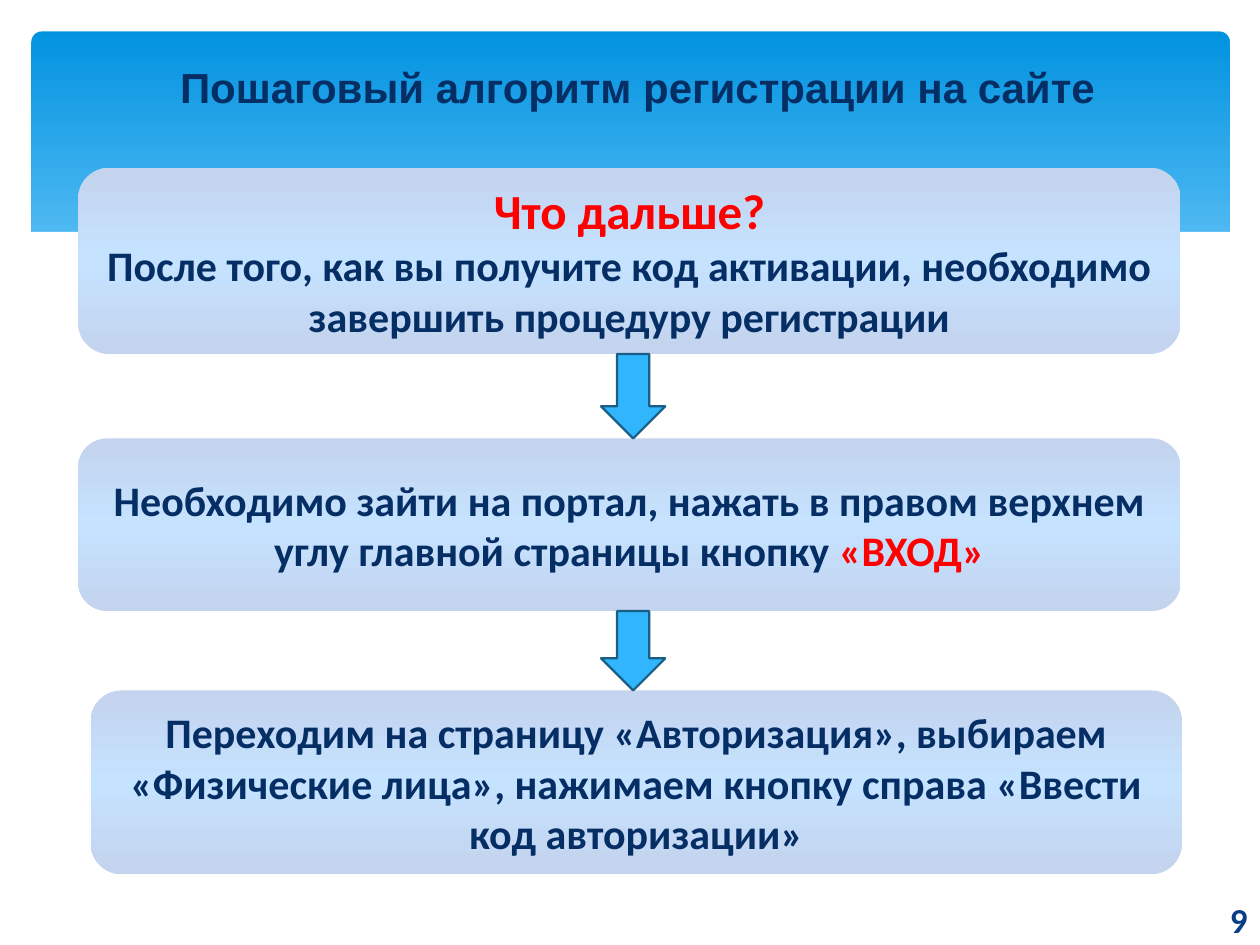
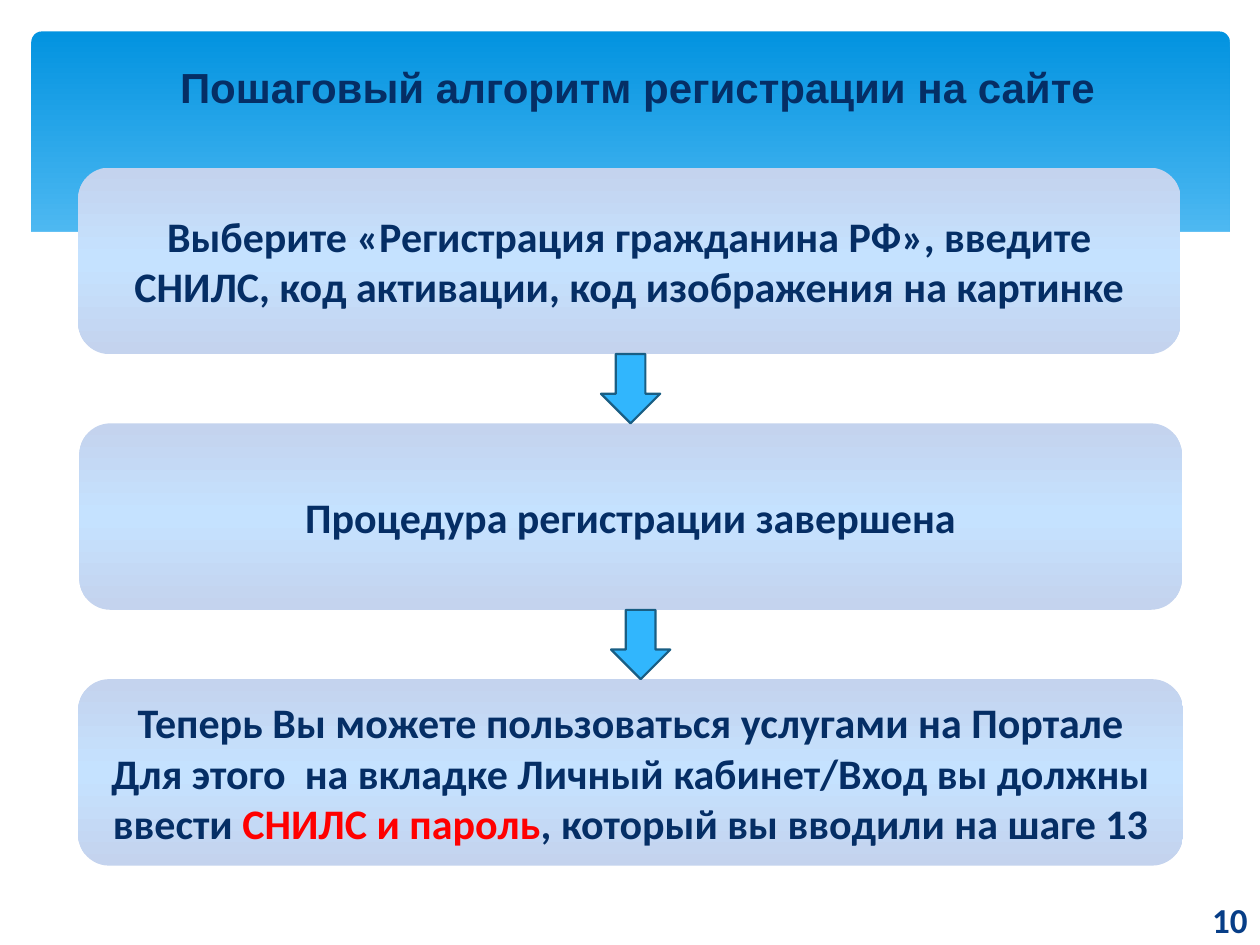
"""Build two slides on the steps of registering on a portal."""
from itertools import pairwise

from lxml.etree import SubElement
from pptx import Presentation
from pptx.dml.color import RGBColor
from pptx.enum.shapes import MSO_SHAPE
from pptx.enum.text import MSO_ANCHOR, PP_ALIGN
from pptx.oxml.ns import qn
from pptx.util import Inches, Pt

COLORS = {
    "navy": "052E65", "red": "FF0000", "number": "073E87", "white": "FFFFFF",
    "band_top": "0293E0", "band_bottom": "83D3FE",
    "step_edge": "C4D3EE", "step_middle": "C5E2FF",
    "arrow": "31B6FD", "arrow_line": "195E84",
}
TITLE = "Пошаговый алгоритм регистрации на сайте"
BAND_GRADIENT = [(0, "band_top"), (100, "band_bottom")]
STEP_GRADIENT = [(0, "step_edge"), (50, "step_middle"), (100, "step_edge")]

SLIDES = [
    {
        "number": "9",
        "arrow_width": 0.51,
        "arrow_lefts": [4.77, 4.77],
        "steps": [
            ((0.62, 1.33, 8.75, 1.48), [
                [("Что дальше?", "red", 28)],
                [("После того, как вы получите код активации, необходимо "
                  "завершить процедуру регистрации", "navy", 24)],
            ]),
            ((0.62, 3.48, 8.75, 1.37), [
                [("Необходимо зайти на портал, нажать в правом верхнем углу "
                  "главной страницы кнопку ", "navy", 24),
                 ("«ВХОД»", "red", 24)],
            ]),
            ((0.72, 5.48, 8.66, 1.46), [
                [("Переходим на страницу «Авторизация», выбираем «Физические лица», "
                  "нажимаем кнопку справа «Ввести код авторизации»", "navy", 24)],
            ]),
        ],
    },
    {
        "number": "10",
        "arrow_width": 0.47,
        "arrow_lefts": [4.77, 4.85],
        "steps": [
            ((0.62, 1.33, 8.75, 1.48), [
                [("Выберите «Регистрация гражданина РФ», введите СНИЛС, "
                  "код активации, код изображения на картинке", "navy", 24)],
            ]),
            ((0.63, 3.36, 8.75, 1.48), [
                [("Процедура регистрации завершена", "navy", 24)],
            ]),
            ((0.62, 5.39, 8.77, 1.48), [
                [("Теперь Вы можете пользоваться услугами на Портале", "navy", 24)],
                [("Для этого  на вкладке Личный кабинет/Вход вы должны ввести ", "navy", 24),
                 ("СНИЛС и пароль", "red", 24),
                 (", который вы вводили на шаге 13", "navy", 24)],
            ]),
        ],
    },
]


def rgb(color):
    return RGBColor.from_string(COLORS[color])


def add_plain_shape(slide, kind, box):
    shape = slide.shapes.add_shape(kind, *map(Inches, box))
    shape.shadow.inherit = False
    shape.line.fill.background()
    return shape


def fill_solid(shape, color):
    shape.fill.solid()
    shape.fill.fore_color.rgb = rgb(color)


def fill_gradient(shape, stops):
    shape.fill.gradient()
    shape.fill.gradient_angle = 270
    stop_list = next(shape.element.spPr.iter(qn("a:gsLst")))
    for old_stop in list(stop_list):
        stop_list.remove(old_stop)
    for percent, color in stops:
        stop = SubElement(stop_list, qn("a:gs"), pos=str(percent * 1000))
        SubElement(stop, qn("a:srgbClr"), val=COLORS[color])


def write(frame, paragraphs, font="Calibri", align=PP_ALIGN.CENTER, anchor=MSO_ANCHOR.MIDDLE):
    frame.word_wrap = True
    frame.vertical_anchor = anchor
    for index, pieces in enumerate(paragraphs):
        paragraph = frame.add_paragraph() if index else frame.paragraphs[0]
        paragraph.alignment = align
        for text, color, size in pieces:
            run = paragraph.add_run()
            run.text = text
            run.font.name = font
            run.font.size = Pt(size)
            run.font.bold = True
            run.font.color.rgb = rgb(color)


def add_frame(slide, number):
    band = add_plain_shape(slide, MSO_SHAPE.ROUNDED_RECTANGLE, (0.25, 0.25, 9.51, 2.7))
    band.adjustments[0] = 0.03
    fill_gradient(band, BAND_GRADIENT)
    band_cover = add_plain_shape(slide, MSO_SHAPE.RECTANGLE, (0.23, 1.84, 9.54, 1.45))
    fill_solid(band_cover, "white")
    title = slide.shapes.add_textbox(*map(Inches, (0.12, 0.05, 9.88, 0.89)))
    write(title.text_frame, [[(TITLE, "navy", 24)]], font="Arial", anchor=MSO_ANCHOR.BOTTOM)
    page_number = slide.shapes.add_textbox(*map(Inches, (8.73, 7.1, 1.27, 0.4)))
    write(page_number.text_frame, [[(number, "number", 20)]], align=PP_ALIGN.RIGHT)


def add_step(slide, box, paragraphs):
    step = add_plain_shape(slide, MSO_SHAPE.ROUNDED_RECTANGLE, box)
    fill_gradient(step, STEP_GRADIENT)
    write(step.text_frame, paragraphs)


def add_arrow(slide, left, width, upper, lower):
    top = upper[1] + upper[3]
    arrow = add_plain_shape(slide, MSO_SHAPE.DOWN_ARROW, (left, top, width, lower[1] - top))
    fill_solid(arrow, "arrow")
    arrow.line.color.rgb = rgb("arrow_line")
    arrow.line.width = Pt(1.25)


def main():
    deck = Presentation()
    deck.slide_width, deck.slide_height = Inches(10), Inches(7.5)
    for content in SLIDES:
        slide = deck.slides.add_slide(deck.slide_layouts[6])
        add_frame(slide, content["number"])
        for box, paragraphs in content["steps"]:
            add_step(slide, box, paragraphs)
        boxes = [box for box, _ in content["steps"]]
        for left, (upper, lower) in zip(content["arrow_lefts"], pairwise(boxes)):
            add_arrow(slide, left, content["arrow_width"], upper, lower)
    deck.save("out.pptx")


if __name__ == "__main__":
    main()
